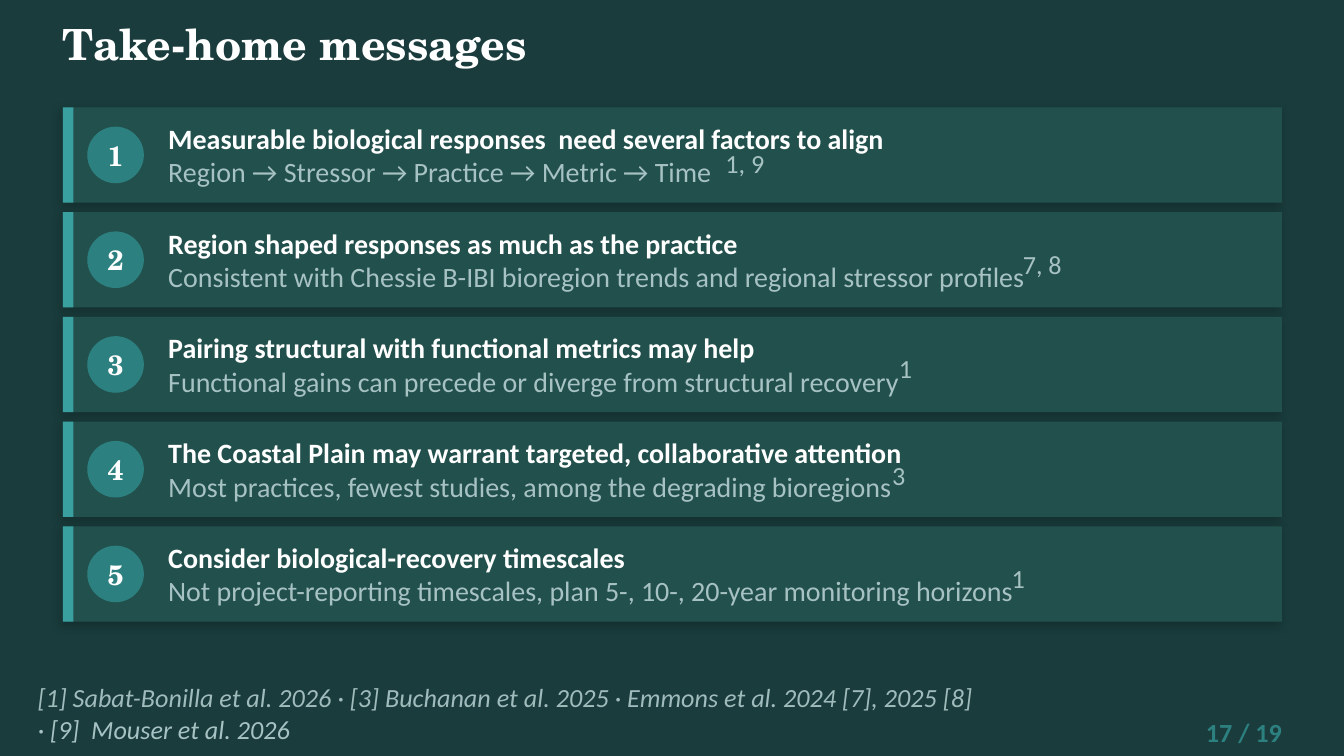
"""Build the take-home messages slide with five numbered message cards."""
from dataclasses import dataclass

from lxml.etree import SubElement
from pptx import Presentation
from pptx.dml.color import RGBColor
from pptx.enum.shapes import MSO_SHAPE
from pptx.enum.text import MSO_ANCHOR, MSO_AUTO_SIZE, PP_ALIGN
from pptx.oxml.ns import qn
from pptx.util import Cm, Pt


@dataclass(frozen=True)
class Theme:
    background: str = "1A3C3C"
    card: str = "22504C"
    accent: str = "3A9F9F"
    badge: str = "2D8080"
    white: str = "FFFFFF"
    muted: str = "A7C2C2"
    reference: str = "A0BBBB"
    heading_font: str = "TeX Gyre Schola"
    body_font: str = "Calibri"
    title_size: int = 23
    body_size: int = 15
    small_size: int = 14


MESSAGES = [
    ("Measurable biological responses  need several factors to align",
     "Region → Stressor → Practice → Metric → Time",
     ("1, 9", 13.46, 0.51, 1.63)),
    ("Region shaped responses as much as the practice",
     "Consistent with Chessie B-IBI bioregion trends and regional stressor profiles",
     ("7, 8", 19.08, 0.43, 1.63)),
    ("Pairing structural with functional metrics may help",
     "Functional gains can precede or diverge from structural recovery",
     ("1", 16.74, 0.43, 1.07)),
    ("The Coastal Plain may warrant targeted, collaborative attention",
     "Most practices, fewest studies, among the degrading bioregions",
     ("3", 16.61, 0.46, 0.74)),
    ("Consider biological-recovery timescales",
     "Not project-reporting timescales, plan 5-, 10-, 20-year monitoring horizons",
     ("1", 18.87, 0.43, 1.07)),
]
REFERENCES = [
    "[1] Sabat-Bonilla et al. 2026 · [3] Buchanan et al. 2025 · Emmons et al. 2024 [7], 2025 [8]",
    "· [9]  Mouser et al. 2026",
]
MARGIN, CONTENT_WIDTH = 1.19, 23.04
CARD_TOP, CARD_HEIGHT, CARD_PITCH = 2.03, 1.8, 1.98
BADGE_LEFT, BADGE_SIZE = 1.65, 1.07
TEXT_LEFT, TEXT_WIDTH, TEXT_HEIGHT = 3.18, 20.37, 1.42


class SlideBuilder:
    def __init__(self, slide, theme):
        self.slide = slide
        self.theme = theme
        fill = slide.background.fill
        fill.solid()
        fill.fore_color.rgb = RGBColor.from_string(theme.background)

    def shape(self, kind, left, top, width, height, color):
        shape = self.slide.shapes.add_shape(kind, Cm(left), Cm(top), Cm(width), Cm(height))
        shape.shadow.inherit = False
        shape.fill.solid()
        shape.fill.fore_color.rgb = RGBColor.from_string(color)
        shape.line.fill.background()
        return shape

    def drop_shadow(self, shape):
        effects = shape._element.spPr.find(qn("a:effectLst"))
        shadow = SubElement(effects, qn("a:outerShdw"), blurRad=str(Pt(5.2)),
                            dist=str(Pt(2.2)), dir="8100000", algn="bl", rotWithShape="0")
        color = SubElement(shadow, qn("a:srgbClr"), val="000000")
        SubElement(color, qn("a:alpha"), val="22000")

    def text(self, lines, left, top, width, height, size, colors, font=None, bold=False,
             italic=False, align=PP_ALIGN.LEFT, anchor=MSO_ANCHOR.MIDDLE, insets=(0, 0, 0, 0)):
        box = self.slide.shapes.add_textbox(Cm(left), Cm(top), Cm(width), Cm(height))
        frame = box.text_frame
        frame.word_wrap = True
        frame.vertical_anchor = anchor
        (frame.margin_left, frame.margin_top,
         frame.margin_right, frame.margin_bottom) = map(Cm, insets)
        frame.text = "\n".join(lines)
        for paragraph, color in zip(frame.paragraphs, colors):
            paragraph.alignment = align
            for run in paragraph.runs:
                run.font.name = font or self.theme.body_font
                run.font.size = Pt(size)
                run.font.bold = bold
                run.font.italic = italic
                run.font.color.rgb = RGBColor.from_string(color)
        return frame

    def title(self, text):
        theme = self.theme
        frame = self.text([text], MARGIN, 0.41, CONTENT_WIDTH, 1.8, theme.title_size,
                          [theme.white], theme.heading_font, bold=True, anchor=MSO_ANCHOR.TOP)
        frame.paragraphs[0].line_spacing = 0.95

    def citation(self, text, left, top, width):
        theme = self.theme
        frame = self.text([text], left, top, width, 1.12, theme.small_size, [theme.muted],
                          anchor=MSO_ANCHOR.TOP, insets=(0.25,) * 4)
        frame.auto_size = MSO_AUTO_SIZE.SHAPE_TO_FIT_TEXT

    def card(self, number, heading, detail, citation):
        theme = self.theme
        top = CARD_TOP + (number - 1) * CARD_PITCH
        panel = self.shape(MSO_SHAPE.RECTANGLE, MARGIN, top, CONTENT_WIDTH, CARD_HEIGHT, theme.card)
        self.drop_shadow(panel)
        self.shape(MSO_SHAPE.RECTANGLE, MARGIN, top, 0.2, CARD_HEIGHT, theme.accent)
        badge = (BADGE_LEFT, top + (CARD_HEIGHT - BADGE_SIZE) / 2, BADGE_SIZE, BADGE_SIZE)
        self.shape(MSO_SHAPE.OVAL, *badge, theme.badge)
        self.text([str(number)], *badge, theme.body_size, [theme.white],
                  theme.heading_font, bold=True, align=PP_ALIGN.CENTER)
        frame = self.text([heading, detail], TEXT_LEFT, top + (CARD_HEIGHT - TEXT_HEIGHT) / 2,
                          TEXT_WIDTH, TEXT_HEIGHT, theme.body_size, [theme.white, theme.muted])
        frame.paragraphs[0].runs[0].font.bold = True
        label, left, offset, width = citation
        self.citation(label, left, top + offset, width)

    def footer(self, references, page):
        theme = self.theme
        self.text(references, 0.46, 13.34, 18.44, 0.89, theme.small_size,
                  [theme.reference, theme.muted], italic=True, insets=(0.25, 0.13, 0.25, 0.74))
        self.text([page], 22.12, 13.54, 2.11, 0.61, theme.small_size, [theme.badge],
                  bold=True, align=PP_ALIGN.RIGHT)


def main():
    presentation = Presentation()
    presentation.slide_width = Cm(25.4)
    presentation.slide_height = Cm(14.29)
    slide = presentation.slides.add_slide(presentation.slide_layouts[6])
    builder = SlideBuilder(slide, Theme())
    builder.title("Take-home messages")
    for number, message in enumerate(MESSAGES, start=1):
        builder.card(number, *message)
    builder.footer(REFERENCES, "17 / 19")
    presentation.save("out.pptx")


if __name__ == "__main__":
    main()
